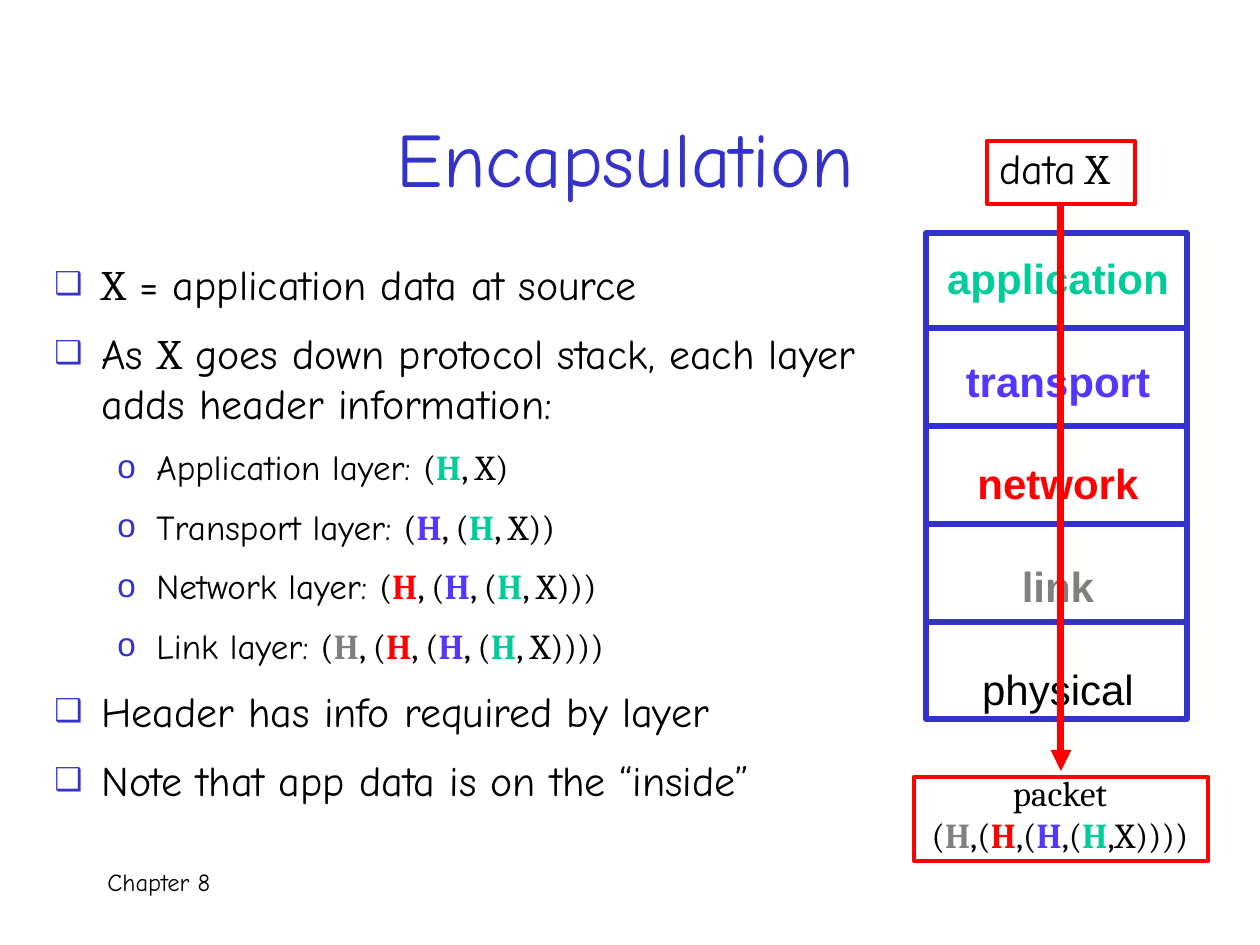
from lxml import etree
from pptx import Presentation
from pptx.dml.color import RGBColor
from pptx.enum.shapes import MSO_CONNECTOR, MSO_SHAPE
from pptx.enum.text import MSO_ANCHOR, PP_ALIGN
from pptx.oxml.ns import qn
from pptx.util import Emu, Pt

RECTANGLE = MSO_SHAPE.RECTANGLE
STRAIGHT = MSO_CONNECTOR.STRAIGHT
LEFT, CENTER = PP_ALIGN.LEFT, PP_ALIGN.CENTER
TOP, MIDDLE = MSO_ANCHOR.TOP, MSO_ANCHOR.MIDDLE

HAND, SERIF, SANS = "Comic Neue", "Cambria", "Arial"
COLORS = {
    "text": "000000", "blue": "3333CC", "red": "FF0000", "white": "FFFFFF",
    "application": "00CC99", "transport": "5437FF", "network": "FF0000",
    "link": "808080", "physical": "000000",
}
LAYERS = ["application", "transport", "network", "link", "physical"]
# level: text size, bullet, bullet size %, left margin px, hanging px
LEVELS = [(24, "❑", 75, 47, 47), (20, "o", 95, 102, 39)]


def px(length):
    return Emu(round(length * 914400 / 126))


def rgb(name):
    return RGBColor.from_string(COLORS[name])


def add_run(paragraph, text, font=HAND, size=24, color="text", bold=False):
    run = paragraph.add_run()
    run.text = text
    run.font.name = font
    run.font.size = Pt(size)
    run.font.bold = bold
    run.font.color.rgb = rgb(color)


def add_text(shapes, box, paragraphs, align=LEFT, anchor=TOP, gap=0, **run_format):
    """Each paragraph is a list of (text, format) runs over the shared format."""
    frame = shapes.add_textbox(*map(px, box)).text_frame
    frame.word_wrap = True
    frame.vertical_anchor = anchor
    for index, runs in enumerate(paragraphs):
        paragraph = frame.add_paragraph() if index else frame.paragraphs[0]
        paragraph.alignment = align
        if index:
            paragraph.space_before = Pt(gap)
        for text, changes in runs:
            add_run(paragraph, text, **{**run_format, **changes})
    return frame


def add_box(shapes, box, line, width, fill=None):
    shape = shapes.add_shape(RECTANGLE, *map(px, box))
    shape.shadow.inherit = False
    if fill:
        shape.fill.solid()
        shape.fill.fore_color.rgb = rgb(fill)
    else:
        shape.fill.background()
    shape.line.color.rgb = rgb(line)
    shape.line.width = Pt(width)
    return shape


def add_line(shapes, x1, y1, x2, y2, color, width):
    line = shapes.add_connector(STRAIGHT, *map(px, (x1, y1, x2, y2)))
    line.line.color.rgb = rgb(color)
    line.line.width = Pt(width)
    etree.SubElement(line._element.spPr, qn("a:effectLst"))
    return line


def nested_headers(depth, space):
    """Runs for X wrapped in the headers of the first `depth` layers."""
    runs = []
    for layer in reversed(LAYERS[:depth]):
        runs.append((f",{space}(" if runs else "(", {"font": SERIF}))
        runs.append(("H", {"font": SERIF, "color": layer, "bold": True}))
    runs.append((f",{space}X" + ")" * depth, {"font": SERIF}))
    return runs


def set_bullet(paragraph, level):
    size, char, percent, margin, hanging = LEVELS[level]
    paragraph.level = level
    paragraph.space_before = Pt(size * 0.2)
    paragraph.space_after = Pt(6)
    properties = paragraph._p.get_or_add_pPr()
    properties.set("marL", str(px(margin)))
    properties.set("indent", str(-px(hanging)))
    color = etree.SubElement(properties, qn("a:buClr"))
    etree.SubElement(color, qn("a:srgbClr"), val=COLORS["blue"])
    etree.SubElement(properties, qn("a:buSzPct"), val=str(percent * 1000))
    etree.SubElement(properties, qn("a:buFont"), typeface=SANS)
    etree.SubElement(properties, qn("a:buChar"), char=char)


def add_bullets(shapes, box):
    x_run = ("X", {"font": SERIF})
    items = [
        (0, [x_run, (" = application data at source", {})]),
        (0, [("As ", {}), x_run,
             (" goes down protocol stack, each layer adds header information:", {})]),
    ]
    for depth, layer in enumerate(LAYERS[:4], start=1):
        label = (f"{layer.capitalize()} layer: ", {})
        items.append((1, [label] + nested_headers(depth, " ")))
    items += [
        (0, [("Header has info required by layer", {})]),
        (0, [("Note that app data is on the “inside”", {})]),
    ]
    paragraphs = [[(text, {"size": LEVELS[level][0], **changes}) for text, changes in runs]
                  for level, runs in items]
    frame = add_text(shapes, box, paragraphs)
    for paragraph, (level, _) in zip(frame.paragraphs, items):
        set_bullet(paragraph, level)


def add_stack(shapes, box):
    left, top, width, height = box
    group = shapes.add_group_shape().shapes
    add_box(group, box, "blue", 3, fill="white")
    names = [[(layer, {"color": layer, "bold": layer != "physical"})] for layer in LAYERS]
    add_text(group, (left, top + 13, width + 3, height - 21), names,
             align=CENTER, gap=30, font=SANS)
    # Dividers between the layers
    for row in range(len(LAYERS) - 1):
        y = top + 95 + 98 * row
        add_line(group, left - 1, y, left + width - 2, y, "blue", 3)


def add_data_flow(shapes, box):
    left, top, width, height = box
    middle = left + width // 2
    # Data at the source
    add_text(shapes, (left + 73, top - 5, 152, 72),
             [[("data", {}), (" X", {"font": SERIF})]])
    data_box = add_box(shapes, (middle - 74, top, 148, 63), "red", 2.5)
    # Arrow down through the stack
    arrow = add_line(shapes, middle, top + 63, middle, top + 630, "red", 4)
    arrow.begin_connect(data_box, 2)
    etree.SubElement(arrow.line._get_or_add_ln(), qn("a:tailEnd"), type="triangle")
    # Packet with all headers
    add_text(shapes, (left - 22, top + 624, 336, 97),
             [[("packet", {})], nested_headers(4, "")],
             align=CENTER, font=SERIF, size=20)
    add_box(shapes, (left, top + height - 84, width, 84), "red", 2.5)


def main():
    presentation = Presentation()
    presentation.slide_width = px(1260)
    presentation.slide_height = px(945)
    shapes = presentation.slides.add_slide(presentation.slide_layouts[6]).shapes

    # Footer and title
    add_text(shapes, (95, 861, 1081, 63), [[("Chapter 8", {})]], size=14)
    add_text(shapes, (32, 73, 1187, 168), [[("Encapsulation", {})]],
             align=CENTER, anchor=MIDDLE, size=44, color="blue")
    # Explanation on the left, protocol stack on the right
    add_bullets(shapes, (42, 252, 840, 588))
    add_stack(shapes, (926, 233, 261, 486))
    add_data_flow(shapes, (914, 141, 294, 720))

    presentation.save("out.pptx")


if __name__ == "__main__":
    main()
